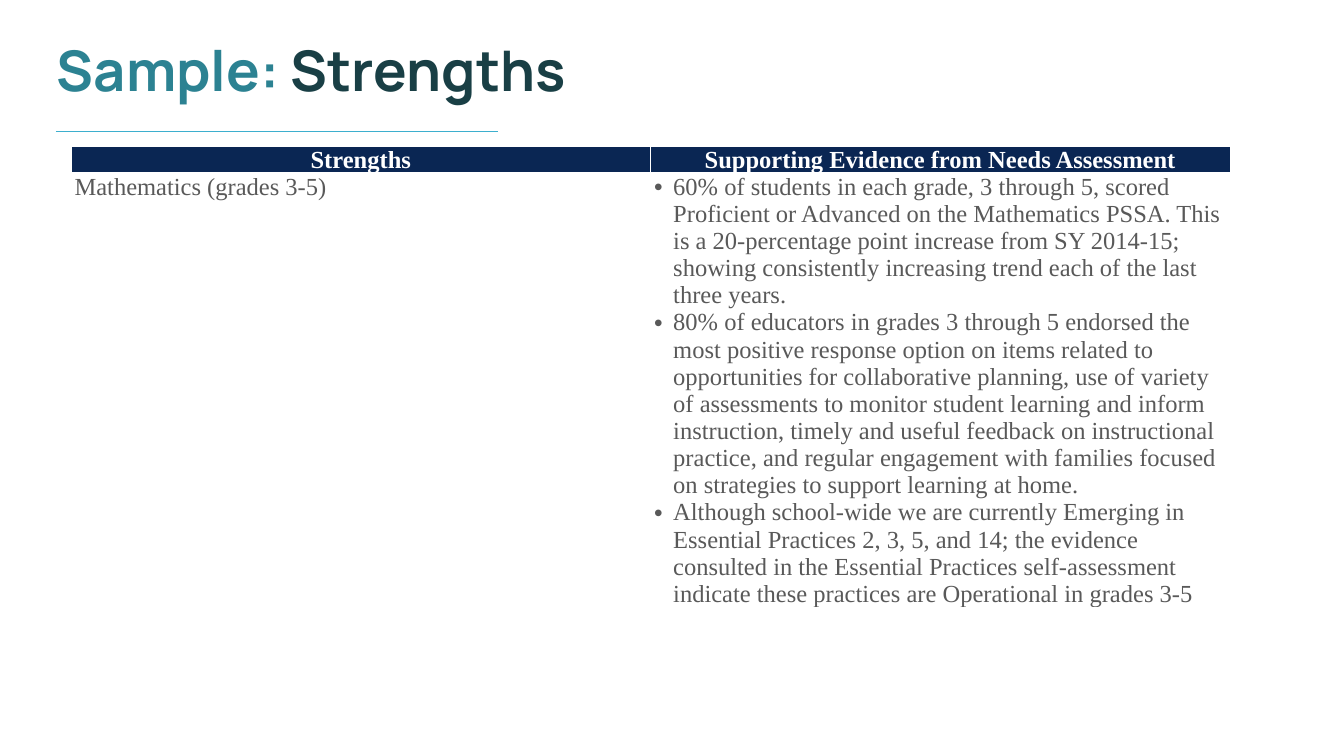
from dataclasses import dataclass

from lxml.etree import SubElement
from pptx import Presentation
from pptx.dml.color import RGBColor as Color
from pptx.enum.shapes import MSO_CONNECTOR as Connector
from pptx.enum.text import MSO_ANCHOR as Anchor, MSO_AUTO_SIZE as AutoSize, PP_ALIGN as Align
from pptx.oxml.ns import qn
from pptx.util import Inches, Pt

HEADERS = ["Strengths", "Supporting Evidence from Needs Assessment"]
STRENGTH = "Mathematics (grades 3-5)"
EVIDENCE = [
    "60% of students in each grade, 3 through 5, scored Proficient or Advanced on the "
    "Mathematics PSSA. This is a 20-percentage point increase from SY 2014-15; showing "
    "consistently increasing trend each of the last three years.",
    "80% of educators in grades 3 through 5 endorsed the most positive response option on "
    "items related to opportunities for collaborative planning, use of variety of "
    "assessments to monitor student learning and inform instruction, timely and useful "
    "feedback on instructional practice, and regular engagement with families focused on "
    "strategies to support learning at home.",
    "Although school-wide we are currently Emerging in Essential Practices 2, 3, 5, and 14; "
    "the evidence consulted in the Essential Practices self-assessment indicate these "
    "practices are Operational in grades 3-5",
]


@dataclass(frozen=True)
class Theme:
    teal: str = "2C8292"
    dark: str = "193F45"
    navy: str = "0A2653"
    white: str = "FFFFFF"
    gray: str = "595959"
    rule: str = "3DAFCE"
    title_font: str = "Manrope"
    table_font: str = "Times New Roman"
    title_size: int = 80
    table_size: int = 35


THEME = Theme()
TITLE_RUNS = [("Sample:", THEME.teal), (" Strengths", THEME.dark)]


def add_run(para, text, font, size, color, bold):
    span = para.add_run()
    span.text = text
    span.font.name = font
    span.font.size = Pt(size)
    span.font.bold = bold
    span.font.color.rgb = Color.from_string(color)


def add_borders(cell, bottom_width):
    properties = cell._tc.get_or_add_tcPr()
    for side, width in (("L", 1), ("R", 1), ("T", 1), ("B", bottom_width)):
        line = SubElement(properties, qn(f"a:ln{side}"), w=str(Pt(width)))
        fill = SubElement(line, qn("a:solidFill"))
        SubElement(fill, qn("a:srgbClr"), val=THEME.white)


def add_bullet(para):
    properties = para._p.get_or_add_pPr()
    properties.set("marL", str(Inches(0.38)))
    properties.set("indent", str(-Inches(0.38)))
    SubElement(properties, qn("a:buFont"), typeface="Arial")
    SubElement(properties, qn("a:buChar"), char="•")


def fill_cell(cell, texts, header=False, bulleted=False):
    cell.margin_left = cell.margin_right = Inches(0.07)
    cell.margin_top = cell.margin_bottom = 0
    add_borders(cell, 3 if header else 1)
    if header:
        cell.fill.solid()
        cell.fill.fore_color.rgb = Color.from_string(THEME.navy)
    else:
        cell.fill.background()
    frame = cell.text_frame
    for index, text in enumerate(texts):
        para = frame.add_paragraph() if index else frame.paragraphs[0]
        para.alignment = Align.CENTER if header else Align.LEFT
        if bulleted:
            add_bullet(para)
        color = THEME.white if header else THEME.gray
        add_run(para, text, THEME.table_font, THEME.table_size, color, header)


def add_title(page):
    title = page.shapes.title
    title.left, title.top = Inches(0.93), 0
    title.width, title.height = Inches(22.99), Inches(2.9)
    frame = title.text_frame
    frame.word_wrap = True
    frame.auto_size = AutoSize.NONE
    frame.vertical_anchor = Anchor.MIDDLE
    frame.margin_left = frame.margin_right = Inches(0.2)
    frame.margin_top = frame.margin_bottom = Inches(0.1)
    para = frame.paragraphs[0]
    para.alignment = Align.LEFT
    para.line_spacing = 0.9
    for text, color in TITLE_RUNS:
        add_run(para, text, THEME.title_font, THEME.title_size, color, True)


def add_strengths_table(page):
    holder = page.shapes.add_table(
        2, len(HEADERS), Inches(1.41), Inches(2.9), Inches(22.99), Inches(9.92))
    table = holder.table
    table.first_row = True
    table.horz_banding = False
    for row in table.rows:
        row.height = Inches(0.41)
    holder.height = Inches(9.92)
    for column, text in enumerate(HEADERS):
        fill_cell(table.cell(0, column), [text], header=True)
    fill_cell(table.cell(1, 0), [STRENGTH])
    fill_cell(table.cell(1, 1), EVIDENCE, bulleted=True)


def add_title_rule(page):
    rule = page.shapes.add_connector(
        Connector.STRAIGHT, Inches(1.11), Inches(2.6), Inches(9.88), Inches(2.6))
    rule.line.color.rgb = Color.from_string(THEME.rule)
    rule.line.width = Pt(1)
    SubElement(rule._element.spPr, qn("a:effectLst"))


def main():
    deck = Presentation()
    deck.slide_width, deck.slide_height = Inches(26.66), Inches(15)
    page = deck.slides.add_slide(deck.slide_layouts[5])
    page.background.fill.solid()
    page.background.fill.fore_color.rgb = Color.from_string(THEME.white)
    add_title(page)
    add_strengths_table(page)
    add_title_rule(page)
    deck.save("out.pptx")


if __name__ == "__main__":
    main()
